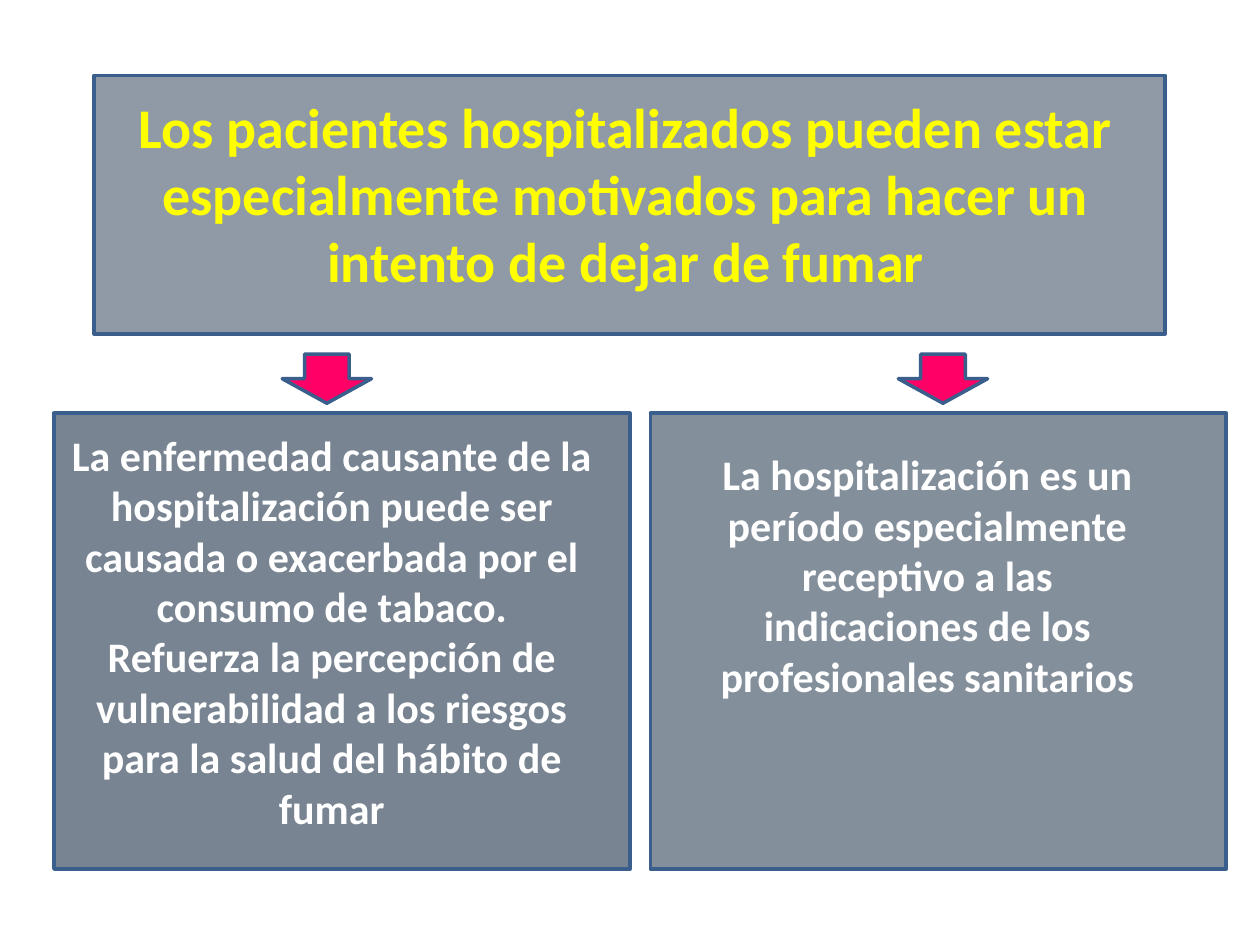
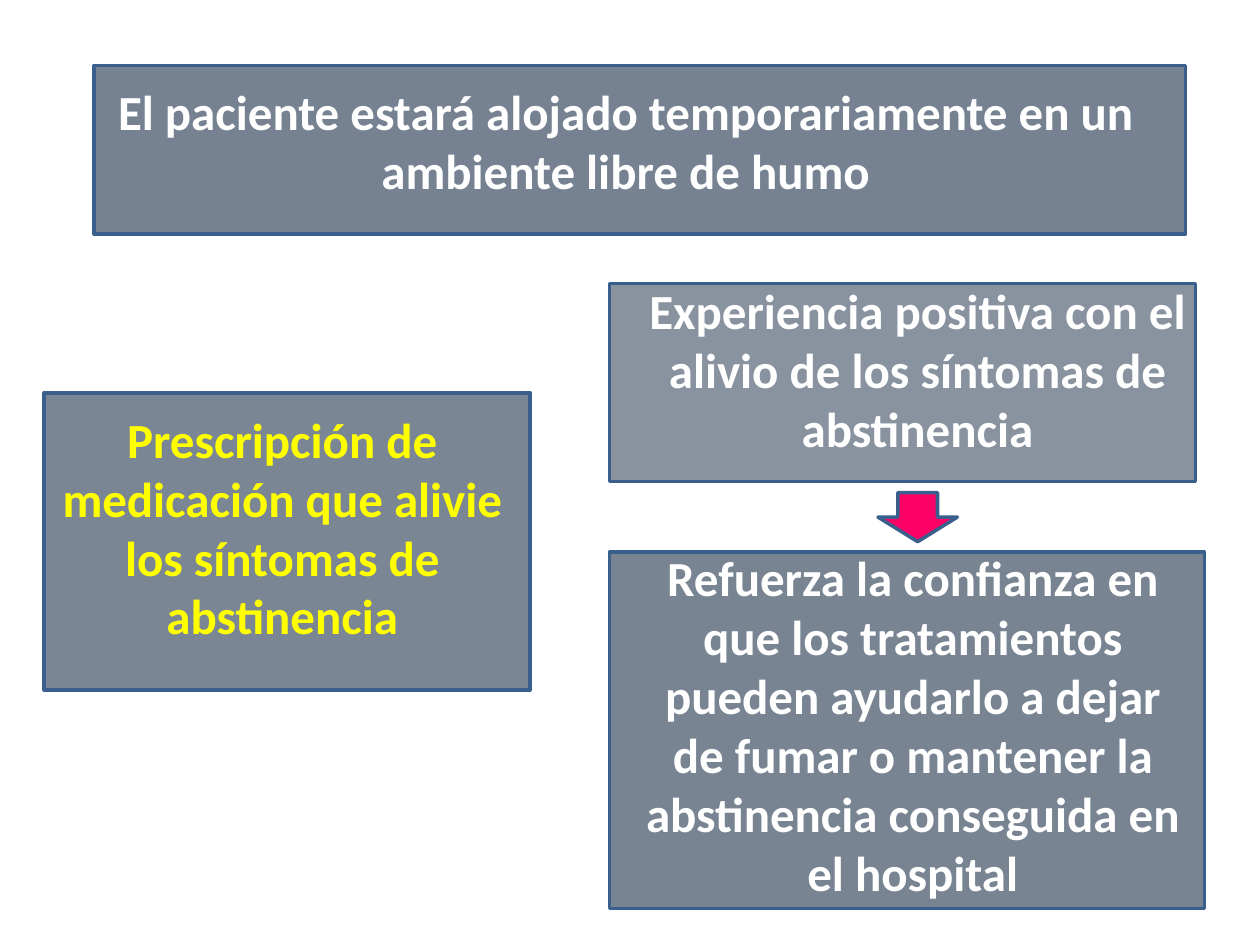
from dataclasses import dataclass

import pptx
import pptx.util
import pptx.dml.color
import pptx.enum.shapes
import pptx.enum.text
import pptx.oxml.ns
from lxml import etree

Cm = pptx.util.Cm
Pt = pptx.util.Pt
Shape = pptx.enum.shapes.MSO_SHAPE


@dataclass(frozen=True)
class Theme:
    font: str = "Calibri"
    navy: str = "0F243E"
    edge: str = "3A5F8C"
    pink: str = "FF0066"
    white: str = "FFFFFF"
    yellow: str = "FFFF00"
    large: int = 32
    medium: int = 28
    small: int = 24
    line: int = 2


THEME = Theme()


def color(code):
    return pptx.dml.color.RGBColor.from_string(code)


def add_block(slide, kind, area, fill):
    block = slide.shapes.add_shape(kind, *map(Cm, area))
    block.shadow.inherit = False
    block.fill.solid()
    block.fill.fore_color.rgb = color(fill)
    block.line.color.rgb = color(THEME.edge)
    block.line.width = Pt(THEME.line)
    return block


def add_panel(slide, area, alpha):
    panel = add_block(slide, Shape.RECTANGLE, area, THEME.navy)
    qn = pptx.oxml.ns.qn
    tint = panel.element.spPr.find(qn("a:solidFill")).find(qn("a:srgbClr"))
    etree.SubElement(tint, qn("a:alpha"), val=str(alpha * 1000))
    return panel


def add_arrow(slide, left, top, width):
    add_block(slide, Shape.DOWN_ARROW, (left, top, width, 0.99), THEME.pink)


def style_text(frame, lines, size, shade):
    frame.word_wrap = True
    frame.vertical_anchor = pptx.enum.text.MSO_ANCHOR.TOP
    frame.text = "\n".join(lines)
    for para in frame.paragraphs:
        para.alignment = pptx.enum.text.PP_ALIGN.CENTER
        for run in para.runs:
            run.font.name = THEME.font
            run.font.size = Pt(size)
            run.font.bold = True
            run.font.color.rgb = color(shade)


def add_text(slide, area, lines, size, shade=THEME.white):
    box = slide.shapes.add_textbox(*map(Cm, area))
    style_text(box.text_frame, lines, size, shade)
    box.text_frame.auto_size = pptx.enum.text.MSO_AUTO_SIZE.SHAPE_TO_FIT_TEXT


def add_title(slide, panel, area, text, size, shade):
    title = slide.shapes.title
    title.left, title.top, title.width, title.height = map(Cm, area)
    style_text(title.text_frame, [text], size, shade)
    title.text_frame.auto_size = pptx.enum.text.MSO_AUTO_SIZE.NONE
    panel.element.addnext(title.element)


def build_motives(slide):
    panel = add_panel(slide, (1.9, 1.52, 21.59, 5.21), 46)
    add_title(
        slide, panel, (2.11, 1.73, 21.01, 4.37),
        "Los pacientes hospitalizados pueden estar especialmente motivados "
        "para hacer un intento de dejar de fumar",
        THEME.large, THEME.yellow)
    causes = [
        "La enfermedad causante de la hospitalización puede ser causada o "
        "exacerbada por el consumo de tabaco.",
        "Refuerza la percepción de vulnerabilidad a los riesgos para la "
        "salud del hábito de fumar",
    ]
    timing = [
        "La hospitalización es un período especialmente receptivo a las "
        "indicaciones de los profesionales sanitarios",
    ]
    columns = [
        (1.09, 56, 5.69, (1.09, 8.53, 11.2, 8.46), causes),
        (13.11, 51, 18.11, (14.1, 8.92, 9.19, 5.38), timing),
    ]
    for left, alpha, tip, area, lines in columns:
        add_panel(slide, (left, 8.33, 11.61, 9.19), alpha)
        add_text(slide, area, lines, THEME.small)
        add_arrow(slide, tip, 7.14, 1.8)


def build_relief(slide):
    panel = add_panel(slide, (1.9, 1.32, 22, 3.4), 57)
    add_title(
        slide, panel, (0.71, 1.52, 23.8, 2.64),
        "El paciente estará alojado temporariamente en un ambiente libre "
        "de humo",
        THEME.medium, THEME.white)
    cards = [
        ((0.89, 7.92, 9.8, 5.99), 55, (0.89, 8.13, 9.6, 5.05), THEME.yellow,
         "Prescripción de medicación que alivie los síntomas de abstinencia"),
        ((12.29, 5.72, 11.81, 3.99), 49, (12.5, 5.54, 11.99, 3.84), THEME.white,
         "Experiencia positiva con el alivio de los síntomas de abstinencia"),
        ((12.29, 11.13, 11.99, 7.19), 56, (12.7, 10.92, 11.4, 7.44), THEME.white,
         "Refuerza la confianza en que los tratamientos pueden ayudarlo a "
         "dejar de fumar o mantener la abstinencia conseguida en el hospital"),
    ]
    for frame, alpha, area, shade, text in cards:
        add_panel(slide, frame, alpha)
        add_text(slide, area, [text], THEME.medium, shade)
    add_arrow(slide, 17.7, 9.93, 1.6)


def main():
    deck = pptx.Presentation()
    deck.slide_width, deck.slide_height = Cm(25.4), Cm(19.05)
    layout = deck.slide_layouts.get_by_name("Title Only")
    for build in (build_motives, build_relief):
        build(deck.slides.add_slide(layout))
    deck.save("out.pptx")


if __name__ == "__main__":
    main()
